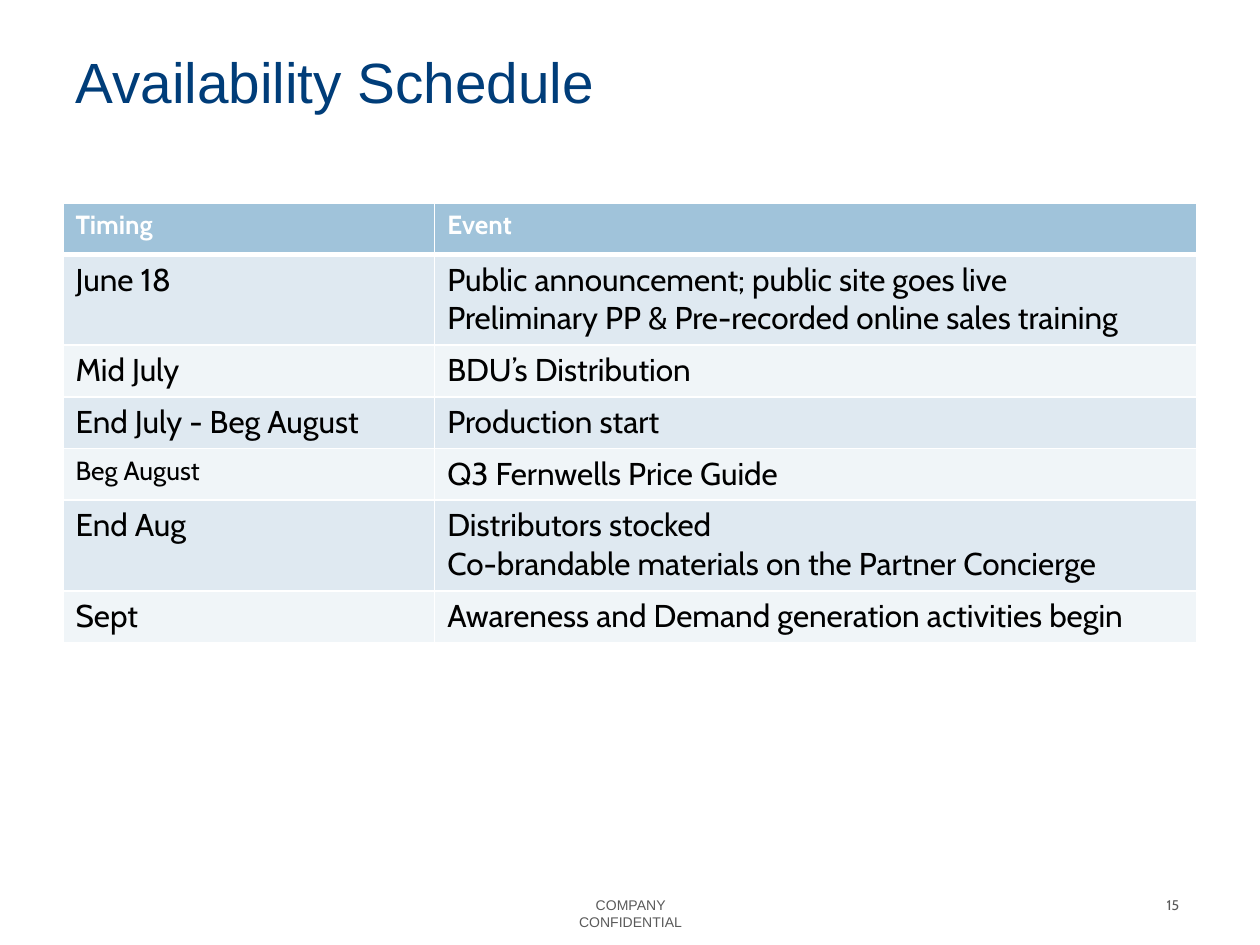
from dataclasses import dataclass

from lxml.etree import SubElement
from pptx import Presentation
from pptx.dml.color import RGBColor as Color
from pptx.enum.text import MSO_ANCHOR as Anchor, PP_ALIGN as Align
from pptx.oxml.ns import qn
from pptx.util import Inches, Pt


@dataclass(frozen=True)
class Theme:
    heading_font: str = "Arial"
    body_font: str = "Cabin"
    navy: str = "003D79"
    grey: str = "5A5A5A"
    white: str = "FFFFFF"
    black: str = "000000"
    header_fill: str = "A0C3DA"
    band_fills: tuple = ("DFE9F1", "F0F5F8")
    title_size: float = 32.4
    body_size: int = 18
    small_size: int = 15
    footer_size: int = 8
    border: int = 1
    header_rule: int = 3


def write_text(frame, text, *, font, size, color, bold=False, align=Align.LEFT):
    for index, line in enumerate(text.split("\n")):
        para = frame.add_paragraph() if index else frame.paragraphs[0]
        para.alignment = align
        span = para.add_run()
        span.text = line
        span.font.name = font
        span.font.size = Pt(size)
        span.font.bold = bold
        span.font.color.rgb = Color.from_string(color)


class SlideBuilder:
    def __init__(self, page, theme):
        self.page = page
        self.theme = theme

    def text(self, text, left, top, width, height, *, anchor=Anchor.TOP, inset=None, **style):
        box = self.page.shapes.add_textbox(Inches(left), Inches(top), Inches(width), Inches(height))
        frame = box.text_frame
        frame.word_wrap = True
        frame.vertical_anchor = anchor
        if inset is not None:
            frame.margin_left = frame.margin_right = Inches(inset)
            frame.margin_top = frame.margin_bottom = Inches(inset)
        write_text(frame, text, **style)

    def borders(self, cell, top, bottom):
        properties = cell._tc.get_or_add_tcPr()
        widths = {"L": self.theme.border, "R": self.theme.border, "T": top, "B": bottom}
        for side, width in widths.items():
            line = SubElement(properties, qn(f"a:ln{side}"), w=str(Pt(width)))
            fill = SubElement(line, qn("a:solidFill"))
            SubElement(fill, qn("a:srgbClr"), val=self.theme.white)

    def table(self, rows, left, top, widths, heights, small_cells):
        theme = self.theme
        shape = self.page.shapes.add_table(
            len(rows), len(widths), Inches(left), Inches(top),
            Inches(sum(widths)), Inches(sum(heights)))
        table = shape.table
        for column, width in zip(table.columns, widths):
            column.width = Inches(width)
        for row, height in zip(table.rows, heights):
            row.height = Inches(height)
        for row_index, row in enumerate(rows):
            header = row_index == 0
            fill = theme.header_fill if header else theme.band_fills[(row_index - 1) % 2]
            for column_index, text in enumerate(row):
                cell = table.cell(row_index, column_index)
                self.borders(cell,
                             theme.header_rule if row_index == 1 else theme.border,
                             theme.header_rule if header else theme.border)
                cell.fill.solid()
                cell.fill.fore_color.rgb = Color.from_string(fill)
                small = header or (row_index, column_index) in small_cells
                write_text(cell.text_frame, text, font=theme.body_font,
                           size=theme.small_size if small else theme.body_size,
                           color=theme.white if header else theme.black, bold=header)


def main():
    deck = Presentation()
    deck.slide_width, deck.slide_height = Inches(10), Inches(7.5)
    theme = Theme()
    builder = SlideBuilder(deck.slides.add_slide(deck.slide_layouts[6]), theme)

    builder.text("15", 7.03, 7.12, 2.33, 0.13, anchor=Anchor.MIDDLE, inset=0,
                 font=theme.body_font, size=theme.footer_size, color=theme.grey, align=Align.RIGHT)
    builder.text("COMPANY CONFIDENTIAL", 4.28, 7.07, 1.45, 0.24,
                 font=theme.heading_font, size=theme.footer_size, color=theme.grey, align=Align.CENTER)
    builder.text("Availability Schedule", 0.5, 0.31, 8.98, 0.67, anchor=Anchor.MIDDLE,
                 font=theme.heading_font, size=theme.title_size, color=theme.navy)

    schedule = [
        ("Timing", "Event"),
        ("June 18", "Public announcement; public site goes live\n"
                    "Preliminary PP & Pre-recorded online sales training"),
        ("Mid July", "BDU’s Distribution"),
        ("End July - Beg August", "Production start"),
        ("Beg August", "Q3 Fernwells Price Guide"),
        ("End Aug", "Distributors stocked\nCo-brandable materials on the Partner Concierge"),
        ("Sept", "Awareness and Demand generation activities begin"),
    ]
    heights = [0.72 if "\n" in event else 0.41 for _, event in schedule]
    builder.table(schedule, 0.5, 1.61, (2.95, 6.05), heights, small_cells={(4, 0)})

    deck.save("out.pptx")


if __name__ == "__main__":
    main()
